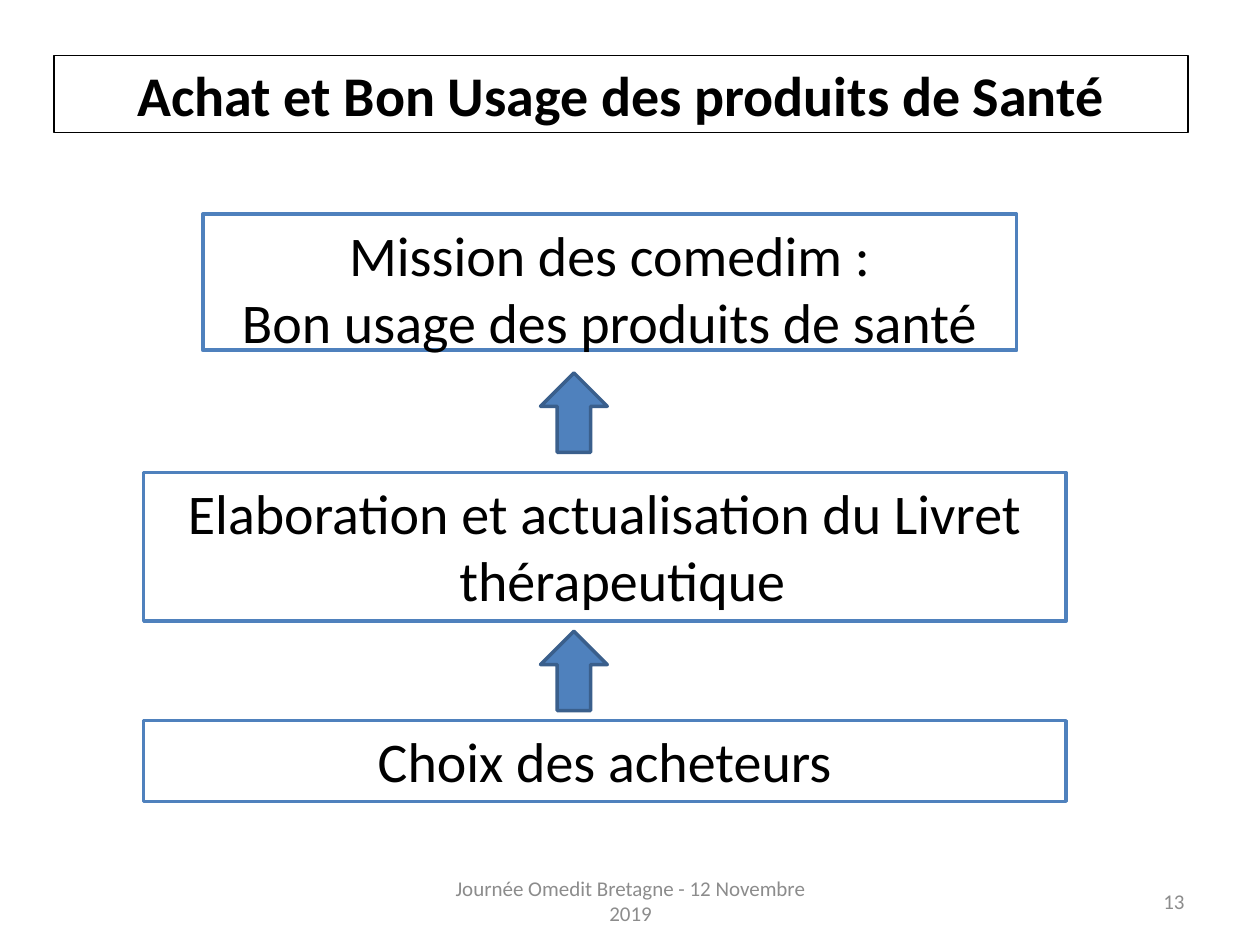
from typing import NamedTuple

from pptx import Presentation
from pptx.dml.color import RGBColor
from pptx.enum.shapes import MSO_SHAPE as Shape
from pptx.enum.text import MSO_ANCHOR as Anchor, PP_ALIGN as Align
from pptx.util import Emu, Inches, Pt

BLACK = RGBColor(0x00, 0x00, 0x00)
WHITE = RGBColor(0xFF, 0xFF, 0xFF)
BLUE = RGBColor(0x4F, 0x81, 0xBD)
DARK_BLUE = RGBColor(0x3A, 0x5F, 0x8C)
GREY = RGBColor(0x8C, 0x8C, 0x8C)

COLS, ROWS = 100, 75  # grid cells of a tenth of an inch
HANGING = 0.38


class Area(NamedTuple):
    """Place on the grid, in columns and rows."""
    col: float
    row: float
    cols: float
    rows: float


class Line(NamedTuple):
    text: str
    indent: float = -HANGING


class Step(NamedTuple):
    area: Area
    lines: tuple[Line, ...]


class Footer(NamedTuple):
    area: Area
    text: str
    align: Align


TITLE = "Achat et Bon Usage des produits de Santé"
TITLE_AREA = Area(4.3, 4.4, 90, 6.1)
STEPS = (
    # The deeper indent sets the heading slightly left of centre
    Step(Area(16.1, 17, 64.6, 10.8),
         (Line("Mission des comedim :", -0.58),
          Line("Bon usage des produits de santé"))),
    Step(Area(11.4, 37.5, 73.2, 11.8),
         (Line("Elaboration et actualisation du Livret thérapeutique "),)),
    Step(Area(11.4, 57.2, 73.2, 6.4), (Line("Choix des acheteurs"),)),
)
ARROWS = [Area(42.9, row, 5.3, 6.3) for row in (29.6, 50.1)]
FOOTERS = (
    Footer(Area(34.2, 69.5, 31.7, 4),
           "Journée Omedit Bretagne - 12 Novembre 2019", Align.CENTER),
    Footer(Area(71.7, 69.5, 23.3, 4), "13", Align.RIGHT),
)

prs = Presentation()
prs.slide_width, prs.slide_height = Inches(10), Inches(7.5)
s = prs.slides.add_slide(prs.slide_layouts[6])


def place(area: Area) -> tuple[Emu, Emu, Emu, Emu]:
    w, h = prs.slide_width / COLS, prs.slide_height / ROWS
    return (Emu(round(area.col * w)), Emu(round(area.row * h)),
            Emu(round(area.cols * w)), Emu(round(area.rows * h)))


def add_block(kind: Shape, area: Area, fill: RGBColor, line: RGBColor,
              width: float = 2):
    sp = s.shapes.add_shape(kind, *place(area))
    sp.shadow.inherit = False
    sp.fill.solid()
    sp.fill.fore_color.rgb = fill
    sp.line.color.rgb = line
    sp.line.width = Pt(width)
    return sp


def style(p, size: int, color: RGBColor, align: Align,
          bold: bool = False) -> None:
    p.alignment = align
    p.font.name = "Calibri"
    p.font.size = Pt(size)
    p.font.bold = bold
    p.font.color.rgb = color


def add_title() -> None:
    sp = add_block(Shape.RECTANGLE, TITLE_AREA, WHITE, BLACK, 0.75)
    tf = sp.text_frame
    tf.vertical_anchor = Anchor.MIDDLE
    p = tf.paragraphs[0]
    p.text = TITLE
    style(p, 32, BLACK, Align.CENTER, bold=True)


def add_step(step: Step) -> None:
    tf = add_block(Shape.RECTANGLE, step.area, WHITE, BLUE).text_frame
    tf.vertical_anchor = Anchor.TOP
    tf.text = "\n".join(line.text for line in step.lines)
    for p, line in zip(tf.paragraphs, step.lines):
        style(p, 32, BLACK, Align.CENTER)
        pPr = p._p.get_or_add_pPr()
        pPr.set("marL", str(Inches(HANGING)))
        pPr.set("indent", str(Inches(line.indent)))


def add_footer(footer: Footer) -> None:
    tf = s.shapes.add_textbox(*place(footer.area)).text_frame
    tf.word_wrap = True
    tf.vertical_anchor = Anchor.MIDDLE
    p = tf.paragraphs[0]
    p.text = footer.text
    style(p, 12, GREY, footer.align)


add_title()
for step in STEPS:
    add_step(step)
for area in ARROWS:
    add_block(Shape.UP_ARROW, area, BLUE, DARK_BLUE)
for footer in FOOTERS:
    add_footer(footer)

prs.save("out.pptx")
